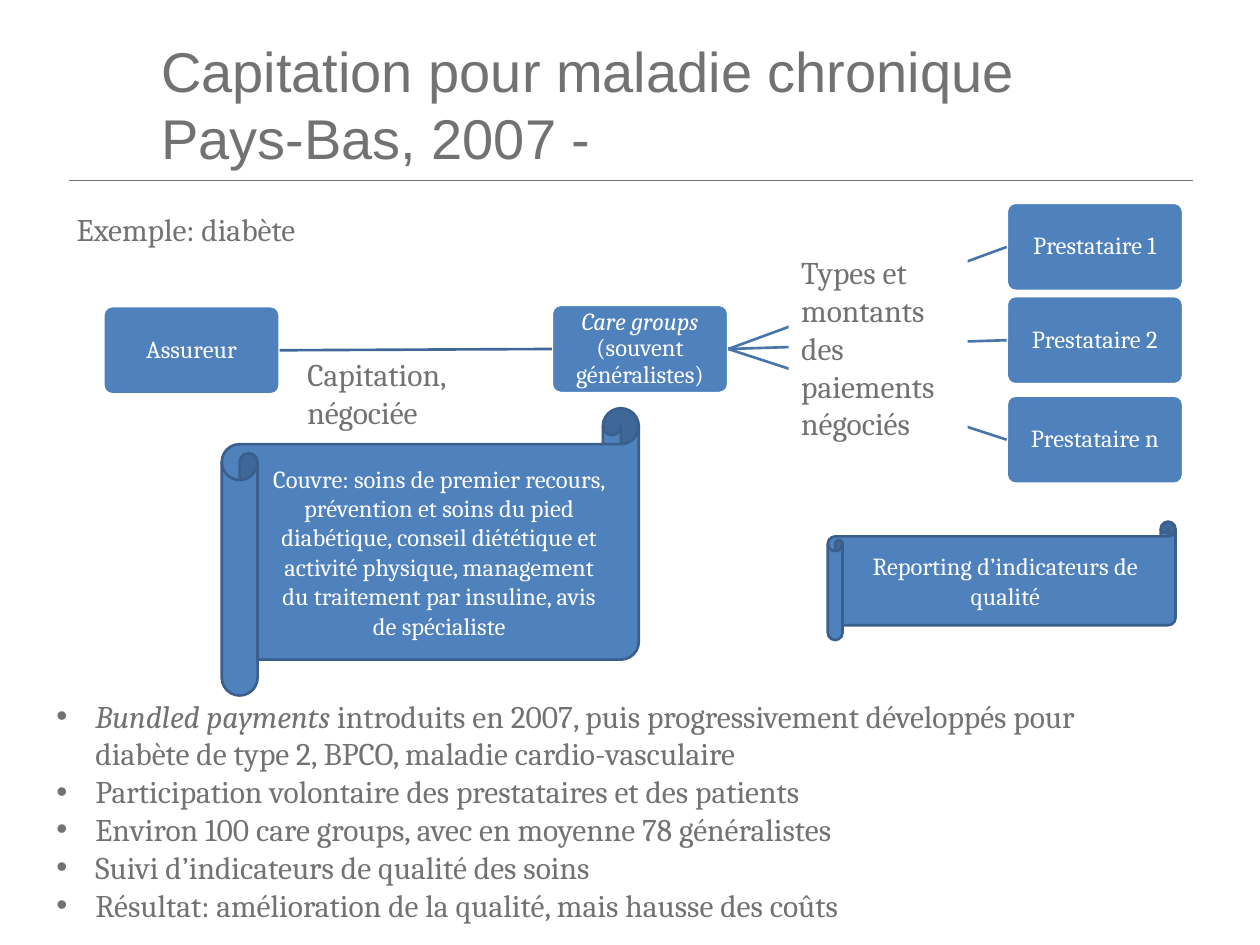
from lxml import etree
from pptx import Presentation
from pptx.dml.color import RGBColor
from pptx.enum.shapes import MSO_CONNECTOR, MSO_SHAPE
from pptx.enum.text import MSO_ANCHOR, PP_ALIGN
from pptx.oxml.ns import qn
from pptx.util import Inches, Pt

STRAIGHT = MSO_CONNECTOR.STRAIGHT
RECTANGLE = MSO_SHAPE.RECTANGLE
ROUNDED = MSO_SHAPE.ROUNDED_RECTANGLE
SCROLL = MSO_SHAPE.HORIZONTAL_SCROLL
MIDDLE, TOP = MSO_ANCHOR.MIDDLE, MSO_ANCHOR.TOP
CENTER, LEFT = PP_ALIGN.CENTER, PP_ALIGN.LEFT
LEFT_SIDE, RIGHT_SIDE = 1, 3

COLORS = {
    "text": "727272",
    "white": "FFFFFF",
    "blue": "4F81BD",
    "scroll_line": "3A5F8C",
    "payer_link": "3F6797",
    "provider_link": "4875AC",
}
BODY_FONT, TITLE_FONT = "Cambria", "Arial"
NODE_WIDTH, NODE_HEIGHT = 1.4, 0.7
BULLETS = [
    [("Bundled payments ", True),
     ("introduits en 2007, puis progressivement développés pour "
      "diabète de type 2, BPCO, maladie cardio-vasculaire", False)],
    [("Participation volontaire des prestataires et des patients", False)],
    [("Environ 100 care groups, avec en moyenne 78 généralistes", False)],
    [("Suivi d’indicateurs de qualité des soins", False)],
    [("Résultat: amélioration de la qualité, mais hausse des coûts", False)],
]


def rgb(name):
    return RGBColor.from_string(COLORS[name])


def to_inches(box):
    return [Inches(value) for value in box]


def write_paragraph(paragraph, runs, size, color, font=BODY_FONT, align=LEFT):
    """Fill a paragraph from (text, italic) pairs."""
    paragraph.alignment = align
    paragraph.font.size = Pt(size)
    for text, italic in runs:
        run = paragraph.add_run()
        run.text = text
        run.font.name = font
        run.font.size = Pt(size)
        run.font.italic = italic
        run.font.color.rgb = rgb(color)


def add_label(slide, box, text, size=18, font=BODY_FONT, anchor=TOP):
    frame = slide.shapes.add_textbox(*to_inches(box)).text_frame
    frame.word_wrap = True
    frame.vertical_anchor = anchor
    paragraph = frame.paragraphs[0]
    paragraph.text = text
    for run in paragraph.runs:
        run.font.name = font
        run.font.size = Pt(size)
        run.font.color.rgb = rgb("text")


def add_filled_shape(slide, kind, box, runs, fill="blue", line=None,
                     size=14, color="white", align=CENTER, anchor=MIDDLE):
    shape = slide.shapes.add_shape(kind, *to_inches(box))
    shape.shadow.inherit = False
    shape.fill.solid()
    shape.fill.fore_color.rgb = rgb(fill)
    if line:
        shape.line.color.rgb = rgb(line)
        shape.line.width = Pt(1.5)
    else:
        shape.line.fill.background()
    frame = shape.text_frame
    frame.word_wrap = True
    frame.vertical_anchor = anchor
    write_paragraph(frame.paragraphs[0], runs, size, color, align=align)
    return shape


def add_line(slide, color, width, ends=(0, 0, 0, 0)):
    line = slide.shapes.add_connector(STRAIGHT, *to_inches(ends))
    line.line.color.rgb = rgb(color)
    line.line.width = Pt(width)
    etree.SubElement(line._element.spPr, qn("a:effectLst"))
    return line


def add_node(slide, left, top, runs):
    node = add_filled_shape(slide, ROUNDED, (left, top, NODE_WIDTH, NODE_HEIGHT),
                            runs, line="white")
    node.adjustments[0] = 0.1
    frame = node.text_frame
    frame.margin_left = frame.margin_right = Inches(0.03)
    frame.margin_top = frame.margin_bottom = Inches(0.03)
    frame.paragraphs[0].line_spacing = 0.9
    return node


def link_nodes(slide, source, target, color):
    link = add_line(slide, color, 1.5)
    link.begin_connect(source, RIGHT_SIDE)
    link.end_connect(target, LEFT_SIDE)


def add_header(slide, box):
    left, top, width, height = box
    add_label(slide, (left + 0.63, top, width - 0.81, height - 0.05),
              "Capitation pour maladie chronique\nPays-Bas, 2007 -",
              size=32, font=TITLE_FONT, anchor=MIDDLE)
    bottom = top + height
    add_line(slide, "text", 0.5, (left, bottom, left + width, bottom))


def add_payment_flow(slide, box):
    """Insurer, care groups and providers, with the payments between them."""
    left, top, width, _ = box
    insurer = add_node(slide, left, top + 0.82, [("Assureur", False)])
    care_groups = add_node(slide, left + 3.56, top + 0.81,
                           [("Care groups ", True), ("(souvent généralistes)", False)])
    link_nodes(slide, insurer, care_groups, "payer_link")
    for name, offset in (("1", 0), ("2", 0.74), ("n", 1.53)):
        provider = add_node(slide, left + width - NODE_WIDTH, top + offset,
                            [(f"Prestataire {name}", False)])
        link_nodes(slide, care_groups, provider, "provider_link")
    add_label(slide, (left + 1.52, top + 1.16, 1.81, 0.71), "Capitation, négociée")
    add_filled_shape(slide, RECTANGLE, (left + 5.44, top + 0.35, 1.42, 1.62),
                     [("Types et montants des paiements négociés", False)],
                     fill="white", size=18, color="text", align=LEFT, anchor=TOP)


def add_scroll(slide, box, text):
    add_filled_shape(slide, SCROLL, box, [(text, False)], line="scroll_line")


def add_bullet_list(slide, box, items):
    frame = slide.shapes.add_textbox(*to_inches(box)).text_frame
    frame.word_wrap = True
    for index, runs in enumerate(items):
        paragraph = frame.add_paragraph() if index else frame.paragraphs[0]
        properties = paragraph._p.get_or_add_pPr()
        properties.set("marL", str(Inches(0.31)))
        properties.set("indent", str(-Inches(0.31)))
        etree.SubElement(properties, qn("a:buFont"), typeface="Arial")
        etree.SubElement(properties, qn("a:buChar"), char="•")
        write_paragraph(paragraph, runs, 18, "text")


def main():
    presentation = Presentation()
    presentation.slide_width, presentation.slide_height = Inches(10), Inches(7.5)
    slide = presentation.slides.add_slide(presentation.slide_layouts[6])

    add_header(slide, (0.55, 0.26, 8.92, 1.17))
    add_payment_flow(slide, (0.82, 1.61, 8.57, 2.23))
    add_bullet_list(slide, (0.35, 5.48, 8.66, 2), BULLETS)
    add_scroll(slide, (1.76, 3.24, 3.31, 2.28),
               "Couvre: soins de premier recours, prévention et soins du pied "
               "diabétique, conseil diététique et activité physique, management "
               "du traitement par insuline, avis de spécialiste")
    add_label(slide, (0.51, 1.62, 3.78, 0.4), "Exemple: diabète")
    add_scroll(slide, (6.57, 4.14, 2.76, 0.94), "Reporting d’indicateurs de qualité")
    presentation.save("out.pptx")


if __name__ == "__main__":
    main()
